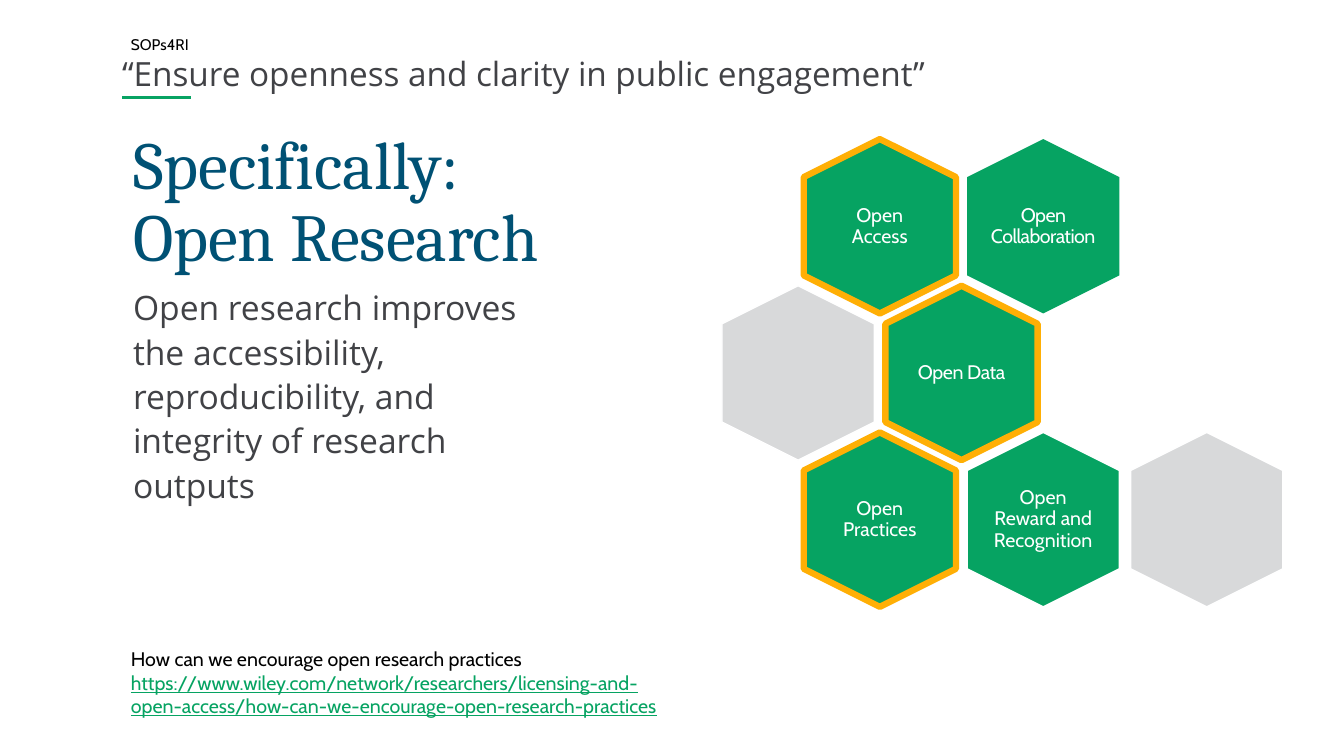
from lxml.etree import SubElement
from pptx import Presentation
from pptx.dml.color import RGBColor
from pptx.enum.shapes import MSO_CONNECTOR as Connector, MSO_SHAPE as Shape
from pptx.enum.text import MSO_ANCHOR as Anchor, PP_ALIGN as Align
from pptx.oxml.ns import qn
from pptx.util import Inches, Pt

WIDTH, HEIGHT = Inches(13.33), Inches(7.5)
COLUMN, ROW = WIDTH / 100, HEIGHT / 100

COLORS = {
    "green": "06A362", "rule": "07A363", "amber": "FFAF05", "grey": "D8D9DA",
    "white": "FFFFFF", "navy": "005174", "slate": "414246", "black": "000000",
}

# Honeycomb: centre of its first cell, half a cell across, one row down
COMB_LEFT, COMB_TOP = 59.38 * COLUMN, 29.93 * ROW
COMB_STEP_X, COMB_STEP_Y = 6.08 * COLUMN, 19.4 * ROW
HEX_LENGTH, HEX_BREADTH = 23.07 * ROW, 11.33 * COLUMN
LABEL_WIDTH, LABEL_HEIGHT = 7.8 * COLUMN, 15.87 * ROW

# half-step, row, label, fill, outline, outline width, letter spacing
CELLS = [
    (1, 0, "Open Access", "green", "amber", 4.5, 0),
    (3, 0, "Open Collaboration", "green", None, 0, -0.4),
    (5, 2, "", "grey", "white", 1, 0),
    (2, 1, "Open Data", "green", "amber", 4.5, -0.3),
    (0, 1, "", "grey", "white", 1, 0),
    (1, 2, "Open Practices", "green", "amber", 4.5, 0),
    (3, 2, "Open Reward and Recognition", "green", "white", 1, 0),
]


def rgb(name):
    return RGBColor.from_string(COLORS[name])


def grid_box(left, top, width, height):
    """Turn columns and rows of the slide grid into lengths."""
    return left * COLUMN, top * ROW, width * COLUMN, height * ROW


def centred_box(x, y, width, height):
    return x - width / 2, y - height / 2, width, height


def format_run(run, font, size, color, spacing=0):
    run.font.name = font
    run.font.size = Pt(size)
    run.font.color.rgb = rgb(color)
    if spacing:
        run._r.get_or_add_rPr().set("spc", str(round(spacing * 100)))


def add_text(slide, box, text, font, size, color, inset=0.2, anchor=Anchor.TOP,
             align=Align.LEFT, line_spacing=1.0, spacing=0, wrap=True):
    """Add a one-paragraph text box and return the paragraph."""
    shape = slide.shapes.add_textbox(*map(round, box))
    frame = shape.text_frame
    frame.word_wrap = wrap
    frame.vertical_anchor = anchor
    frame.margin_left = frame.margin_right = Inches(inset)
    frame.margin_top = frame.margin_bottom = Inches(min(inset, 0.05))
    frame.text = text
    paragraph = frame.paragraphs[0]
    paragraph.alignment = align
    paragraph.line_spacing = line_spacing
    for run in paragraph.runs:
        format_run(run, font, size, color, spacing)
    return paragraph


def add_hexagon(slide, x, y, fill, outline, outline_width):
    box = centred_box(x, y, HEX_LENGTH, HEX_BREADTH)
    hexagon = slide.shapes.add_shape(Shape.HEXAGON, *map(round, box))
    hexagon.rotation = 90
    hexagon.shadow.inherit = False
    hexagon.fill.solid()
    hexagon.fill.fore_color.rgb = rgb(fill)
    if outline:
        hexagon.line.color.rgb = rgb(outline)
        hexagon.line.width = Pt(outline_width)
    else:
        hexagon.line.fill.background()


def add_honeycomb(slide):
    for step, row, label, fill, outline, outline_width, spacing in CELLS:
        x, y = COMB_LEFT + step * COMB_STEP_X, COMB_TOP + row * COMB_STEP_Y
        add_hexagon(slide, x, y, fill, outline, outline_width)
        if label:
            add_text(slide, centred_box(x, y, LABEL_WIDTH, LABEL_HEIGHT), label,
                     "Cabin", 14, "white", inset=0, anchor=Anchor.MIDDLE,
                     align=Align.CENTER, line_spacing=0.9, spacing=spacing)


def add_rule(slide, left, right, y):
    ends = left * COLUMN, y * ROW, right * COLUMN, y * ROW
    rule = slide.shapes.add_connector(Connector.STRAIGHT, *map(round, ends))
    rule.line.color.rgb = rgb("rule")
    rule.line.width = Pt(2)
    SubElement(rule._element.spPr, qn("a:effectLst"))


def add_source(slide):
    paragraph = add_text(slide, grid_box(9, 84.93, 40.74, 10.8),
                         "How can we encourage open research practices ",
                         "Cabin", 14, "black", inset=0.1)
    address = paragraph.add_run()
    address.text = ("https://www.wiley.com/network/researchers/licensing-and-"
                    "open-access/how-can-we-encourage-open-research-practices")
    format_run(address, "Cabin", 14, "green")
    address.font.underline = True


def main():
    presentation = Presentation()
    presentation.slide_width, presentation.slide_height = WIDTH, HEIGHT
    slide = presentation.slides.add_slide(presentation.slide_layouts[6])

    add_rule(slide, 9.08, 14.18, 12.93)
    add_honeycomb(slide)
    add_text(slide, grid_box(8.4, 16.67, 86.2, 22.53),
             "Specifically:\vOpen Research", "Cambria", 48, "navy",
             line_spacing=0.9)
    add_text(slide, grid_box(7.58, 6.67, 67, 7.07),
             "“Ensure openness and clarity in public engagement”",
             "Open Sans", 23.8, "slate", anchor=Anchor.MIDDLE, line_spacing=0.8)
    add_text(slide, grid_box(8.4, 36.8, 34.06, 46.53),
             "Open research improves the accessibility, reproducibility, "
             "and integrity of research outputs",
             "Open Sans", 24, "slate", line_spacing=1.1)
    add_source(slide)
    add_text(slide, grid_box(9, 4, 5.93, 3.87), "SOPs4RI", "Cabin", 11, "black",
             inset=0.1, wrap=False)

    presentation.save("out.pptx")


if __name__ == "__main__":
    main()
